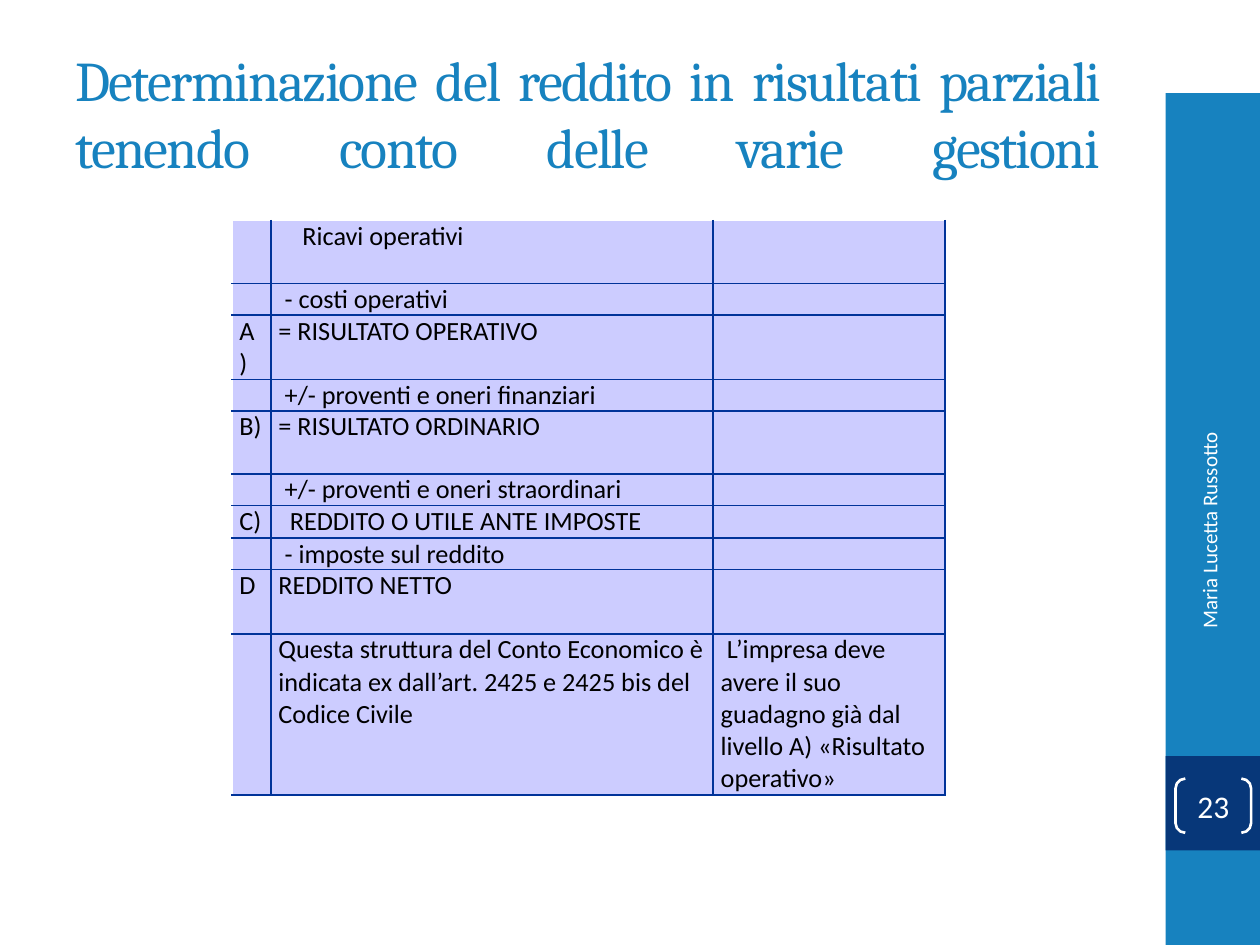
from lxml.etree import SubElement
from pptx import Presentation
from pptx.dml.color import RGBColor
from pptx.enum.shapes import MSO_SHAPE
from pptx.enum.text import MSO_ANCHOR, PP_ALIGN
from pptx.oxml.ns import qn
from pptx.util import Inches, Pt

BLUE, NAVY, WHITE = "1782BF", "073779", "FFFFFF"
LILAC, RULE = "CCCCFF", "003399"
COLS = [0.31, 3.51, 1.84]
ROWS = [
    (0.5, "", "Ricavi operativi", 0.19),
    (0.25, "", "- costi operativi", 0.05),
    (0.51, "A\v)", "= RISULTATO OPERATIVO", 0),
    (0.25, "", "+/- proventi e oneri finanziari", 0.05),
    (0.5, "B)", "= RISULTATO ORDINARIO", 0),
    (0.25, "", "+/- proventi e oneri straordinari", 0.05),
    (0.26, "C)", "REDDITO O UTILE ANTE IMPOSTE", 0.09),
    (0.25, "", "- imposte sul reddito", 0.05),
    (0.51, "D", "REDDITO NETTO", 0),
    (1.28, "", "Questa struttura del Conto Economico è indicata ex dall’art. 2425 "
     "e 2425 bis del Codice Civile", 0),
]
NOTE = "L’impresa deve avere il suo guadagno già dal livello A) «Risultato operativo»"


def rgb(color):
    return RGBColor.from_string(color)


def write(tf, text, size=15, font="Calibri", color="000000", align=PP_ALIGN.LEFT,
          indent=0, spacing=None):
    p = tf.paragraphs[0]
    p.alignment = align
    if indent:
        pPr = p._p.get_or_add_pPr()
        pPr.set("marL", "0")
        pPr.set("indent", str(Inches(indent)))
    if not text:
        SubElement(p._p, qn("a:endParaRPr")).set("sz", str(size * 100))
        return
    p.text = text
    for r in p.runs:
        r.font.size = Pt(size)
        r.font.name = font
        r.font.color.rgb = rgb(color)
        if spacing:
            r._r.get_or_add_rPr().set("spc", str(spacing * 100))


def add_text(s, box, text, **fmt):
    sp = s.shapes.add_textbox(*map(Inches, box))
    tf = sp.text_frame
    tf.word_wrap = True
    tf.vertical_anchor = MSO_ANCHOR.MIDDLE
    write(tf, text, **fmt)
    return sp


def add_block(s, box, color):
    sp = s.shapes.add_shape(MSO_SHAPE.RECTANGLE, *map(Inches, box))
    sp.shadow.inherit = False
    sp.fill.solid()
    sp.fill.fore_color.rgb = rgb(color)
    sp.line.fill.background()


def set_borders(cell, sides):
    tcPr = cell._tc.get_or_add_tcPr()
    for i, side in enumerate(sides):
        ln = tcPr.makeelement(qn(f"a:ln{side}"), {"w": str(Pt(1))})
        SubElement(SubElement(ln, qn("a:solidFill")), qn("a:srgbClr")).set("val", RULE)
        tcPr.insert(i, ln)


def add_income_table(s, left, top):
    heights = [row[0] for row in ROWS]
    box = (left, top, sum(COLS), sum(heights))
    table = s.shapes.add_table(len(ROWS), len(COLS), *map(Inches, box)).table
    table.first_row = table.horz_banding = False
    for col, width in zip(table.columns, COLS):
        col.width = Inches(width)
    for i, (height, label, entry, indent) in enumerate(ROWS):
        table.rows[i].height = Inches(height)
        last = i == len(ROWS) - 1
        parts = [(label, 0), (entry, indent), (NOTE, 0.05) if last else ("", 0)]
        for j, (text, first_line) in enumerate(parts):
            cell = table.cell(i, j)
            cell.margin_left = cell.margin_right = Inches(0.06)
            cell.margin_top = cell.margin_bottom = 0
            cell.fill.solid()
            cell.fill.fore_color.rgb = rgb(LILAC)
            set_borders(cell, ("L" if j else "") + "R" + ("T" if i else "") + "B")
            write(cell.text_frame, text, indent=first_line)


def add_sidebar(s, left, top, width, height):
    add_block(s, (left, top, width, height), BLUE)
    add_block(s, (left, 6, width, width), NAVY)
    author = add_text(s, (left - 0.95, 4.43, 2.59, 0.4), "Maria Lucetta Russotto",
                      size=12, color=WHITE, align=PP_ALIGN.RIGHT)
    author.rotation = 270
    sp = s.shapes.add_shape(MSO_SHAPE.DOUBLE_BRACKET, Inches(left + 0.08),
                            Inches(6.18), Inches(0.6), Inches(0.43))
    sp.adjustments[0] = 0.18
    sp.shadow.inherit = False
    sp.fill.background()
    sp.line.color.rgb = rgb(WHITE)
    sp.line.width = Pt(1.5)
    tf = sp.text_frame
    tf.margin_left = tf.margin_right = tf.margin_top = tf.margin_bottom = 0
    tf.vertical_anchor = MSO_ANCHOR.MIDDLE
    write(tf, "23", size=18, color=WHITE, align=PP_ALIGN.CENTER)


def main():
    prs = Presentation()
    prs.slide_width, prs.slide_height = Inches(10), Inches(7.5)
    s = prs.slides.add_slide(prs.slide_layouts[6])
    add_sidebar(s, 9.25, 0.74, 0.75, 6.76)
    add_text(s, (0.5, 0.27, 8.33, 1.25),
             "\vDeterminazione del reddito in risultati parziali "
             "tenendo conto delle varie gestioni\v",
             size=32, font="Cambria", color=BLUE, align=PP_ALIGN.JUSTIFY, spacing=-1)
    add_income_table(s, 1.84, 1.75)
    prs.save("out.pptx")


if __name__ == "__main__":
    main()
